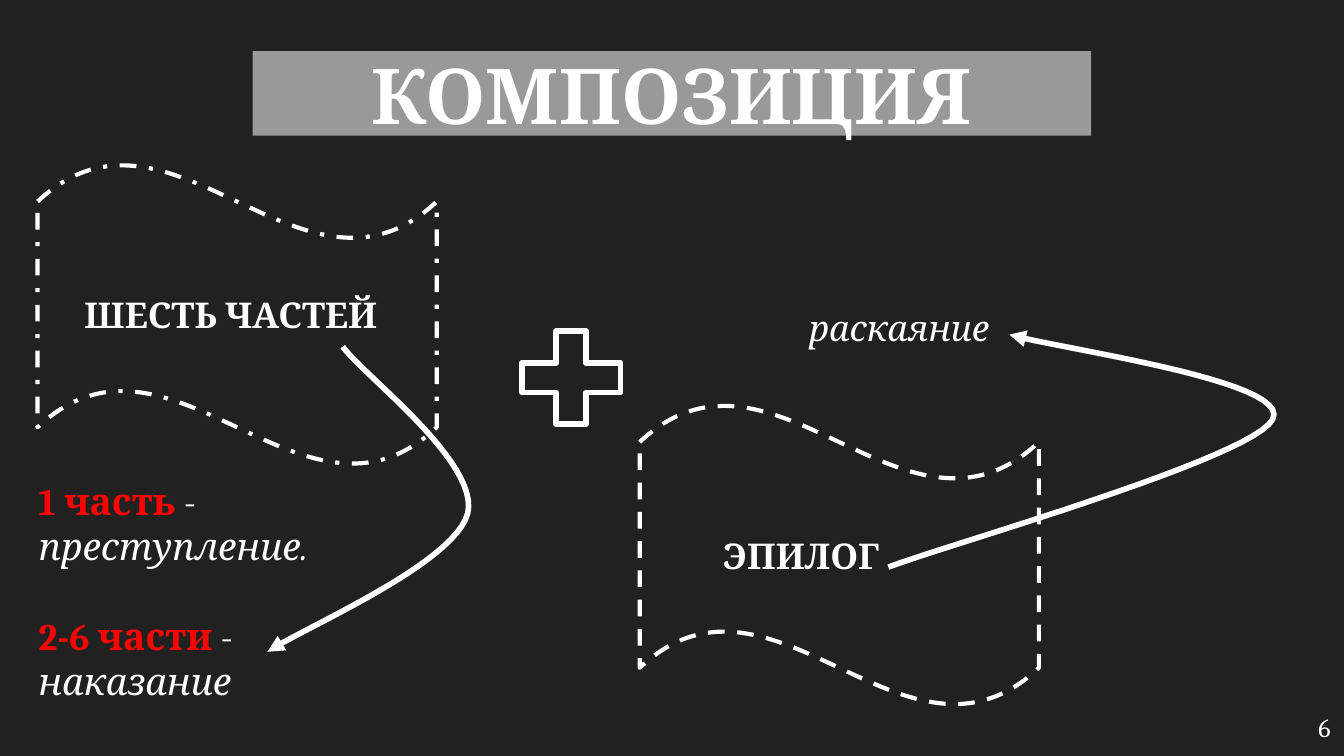
from lxml import etree
from pptx import Presentation
from pptx.dml.color import RGBColor
from pptx.enum.dml import MSO_LINE
from pptx.enum.shapes import MSO_SHAPE
from pptx.enum.text import MSO_ANCHOR, PP_ALIGN
from pptx.oxml.ns import qn
from pptx.util import Inches, Pt

BACKGROUND = RGBColor(0x21, 0x21, 0x21)
GREY = RGBColor(0x99, 0x99, 0x99)
WHITE = RGBColor(0xFF, 0xFF, 0xFF)
RED = RGBColor(0xFF, 0x00, 0x00)
FONT = "Cambria"
LEFT, CENTER, RIGHT = PP_ALIGN.LEFT, PP_ALIGN.CENTER, PP_ALIGN.RIGHT
TOP, MIDDLE = MSO_ANCHOR.TOP, MSO_ANCHOR.MIDDLE
RECTANGLE, WAVE, PLUS = MSO_SHAPE.RECTANGLE, MSO_SHAPE.WAVE, MSO_SHAPE.MATH_PLUS
DASH, DASH_DOT = MSO_LINE.DASH, MSO_LINE.DASH_DOT
WAVE_WIDTH, WAVE_HEIGHT = 2.97, 2.24
CURVE_STEPS = 24


def write_text(shape, paragraphs, size, align=LEFT, anchor=TOP, gap=0):
    """Each paragraph is a list of (text, color, bold, italic) runs."""
    frame = shape.text_frame
    frame.word_wrap = True
    frame.vertical_anchor = anchor
    frame.margin_left = frame.margin_right = Inches(0.1)
    frame.margin_top = frame.margin_bottom = Inches(0.1)
    for index, runs in enumerate(paragraphs):
        paragraph = frame.add_paragraph() if index else frame.paragraphs[0]
        paragraph.alignment = align
        paragraph.space_before = Pt(gap if index else 0)
        for text, color, bold, italic in runs:
            run = paragraph.add_run()
            run.text = text
            run.font.name = FONT
            run.font.size = Pt(size)
            run.font.color.rgb = color
            run.font.bold = bold
            run.font.italic = italic


def add_text(slide, left, top, width, height, paragraphs, size, align=LEFT, gap=0):
    box = slide.shapes.add_textbox(
        Inches(left), Inches(top), Inches(width), Inches(height))
    write_text(box, paragraphs, size, align, gap=gap)


def outline(shape, width, dash=None):
    shape.shadow.inherit = False
    shape.fill.background()
    shape.line.color.rgb = WHITE
    shape.line.width = Pt(width)
    if dash is not None:
        shape.line.dash_style = dash


def add_title(slide, left, top, width, height):
    band = slide.shapes.add_shape(
        RECTANGLE, Inches(left), Inches(top), Inches(width), Inches(height))
    band.shadow.inherit = False
    band.fill.solid()
    band.fill.fore_color.rgb = GREY
    band.line.fill.background()
    write_text(band, [[("КОМПОЗИЦИЯ", WHITE, True, False)]], 41.2, CENTER, MIDDLE)


def add_wave(slide, left, top, dash):
    wave = slide.shapes.add_shape(
        WAVE, Inches(left), Inches(top), Inches(WAVE_WIDTH), Inches(WAVE_HEIGHT))
    wave.adjustments[0] = 0.125
    wave.adjustments[1] = 0
    outline(wave, 2.25, dash)


def add_plus(slide, left, top, width, height):
    plus = slide.shapes.add_shape(
        PLUS, Inches(left), Inches(top), Inches(width), Inches(height))
    plus.adjustments[0] = 0.235
    outline(plus, 3)


def bezier_point(p0, p1, p2, p3, t):
    s = 1 - t
    return tuple(
        Inches(s**3 * a + 3 * s * s * t * b + 3 * s * t * t * c + t**3 * d)
        for a, b, c, d in zip(p0, p1, p2, p3))


def add_curved_arrow(slide, left, top, offsets):
    """Offsets: a start point, then two controls and an end for each curve."""
    knots = [(left + x, top + y) for x, y in offsets]
    points = [
        bezier_point(*knots[start:start + 4], step / CURVE_STEPS)
        for start in range(0, len(knots) - 1, 3)
        for step in range(1, CURVE_STEPS + 1)]
    builder = slide.shapes.build_freeform(
        Inches(knots[0][0]), Inches(knots[0][1]))
    builder.add_line_segments(points, close=False)
    arrow = builder.convert_to_shape()
    outline(arrow, 3)
    # Rounded joins and the arrowhead
    line = arrow.element.spPr.find(qn("a:ln"))
    etree.SubElement(line, qn("a:round"))
    etree.SubElement(line, qn("a:tailEnd"), type="triangle")


def add_six_parts(slide, left, top):
    add_wave(slide, left, top, DASH_DOT)
    add_text(slide, left + 0.25, top + 0.86, 2.45, 0.52,
             [[("ШЕСТЬ ЧАСТЕЙ", WHITE, True, False)]], 19)
    parts = [("1 часть ", "преступление."), ("2-6 части ", "наказание")]
    paragraphs = [
        [(part, RED, True, False), ("- ", WHITE, False, False),
         (theme, WHITE, False, True)]
        for part, theme in parts]
    add_text(slide, left - 0.09, top + 2.24, 3.06, 1.89, paragraphs, 20, gap=24)
    add_curved_arrow(slide, left, top, [
        (2.27, 1.36), (2.42, 1.57), (3.29, 2.22), (3.2, 2.6),
        (3.1, 2.98), (1.96, 3.46), (1.71, 3.63)])


def add_epilogue(slide, left, top):
    add_wave(slide, left, top, DASH)
    add_text(slide, left + 0.1, top + 0.86, 2.2, 0.52,
             [[("ЭПИЛОГ", WHITE, True, False)]], 19, CENTER)
    add_text(slide, left + 1.16, top - 0.83, 2.2, 0.52,
             [[("раскаяние", WHITE, False, True)]], 19)
    add_curved_arrow(slide, left, top, [
        (1.85, 1.21), (2.33, 1.03), (4.56, 0.4), (4.71, 0.11),
        (4.86, -0.18), (3.08, -0.42), (2.75, -0.52)])


def main():
    presentation = Presentation()
    # Widescreen, 16:9
    presentation.slide_width = Inches(10)
    presentation.slide_height = Inches(10 * 9 / 16)
    slide = presentation.slides.add_slide(presentation.slide_layouts[6])
    slide.background.fill.solid()
    slide.background.fill.fore_color.rgb = BACKGROUND

    add_title(slide, 1.88, 0.38, 6.24, 0.63)
    add_six_parts(slide, 0.28, 1.22)
    add_plus(slide, 3.75, 2.34, 1, 0.94)
    add_epilogue(slide, 4.76, 3.01)
    # Slide number
    add_text(slide, 9, 5.19, 1, 0.44, [[("6", WHITE, False, False)]], 14, RIGHT)

    presentation.save("out.pptx")


if __name__ == "__main__":
    main()
